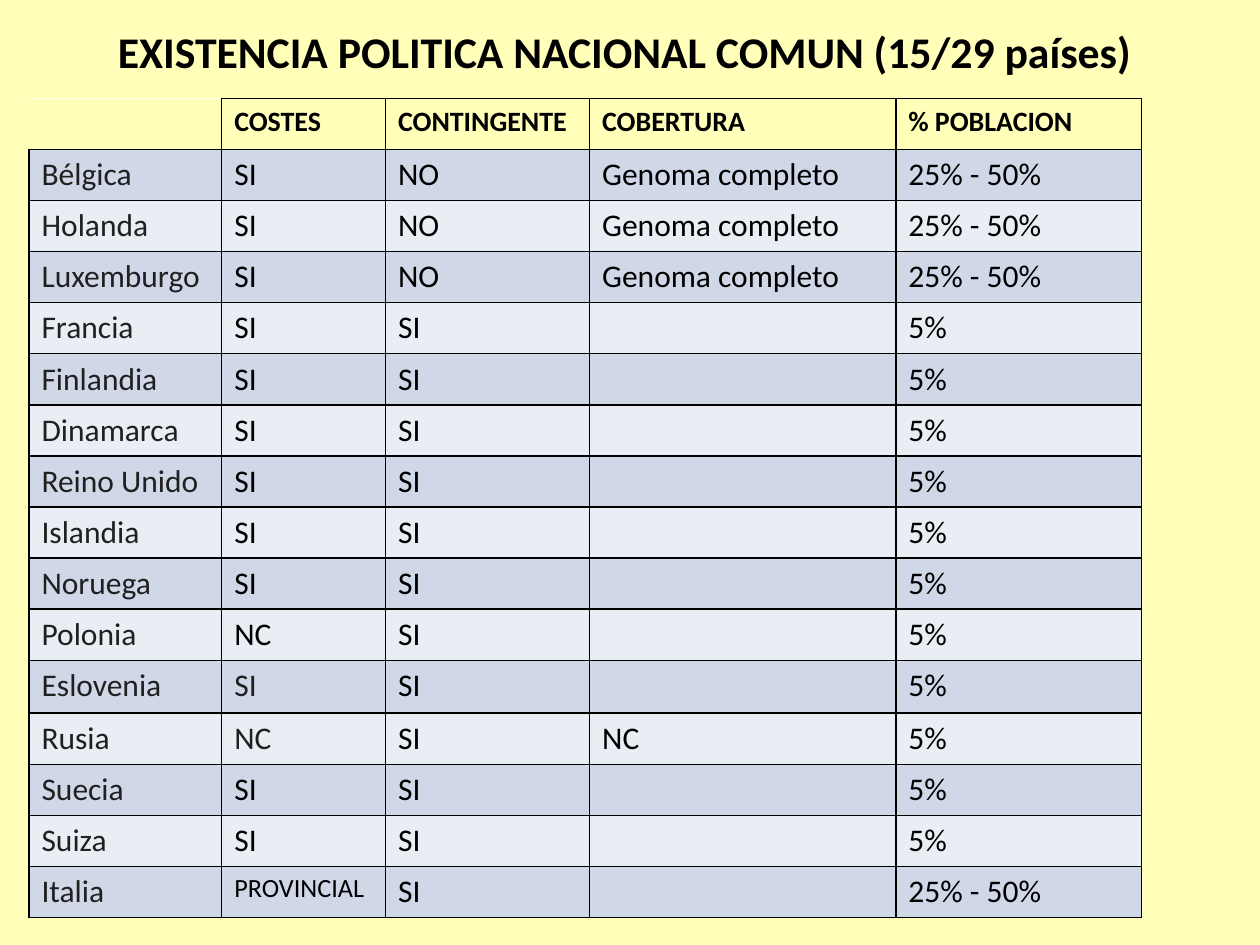
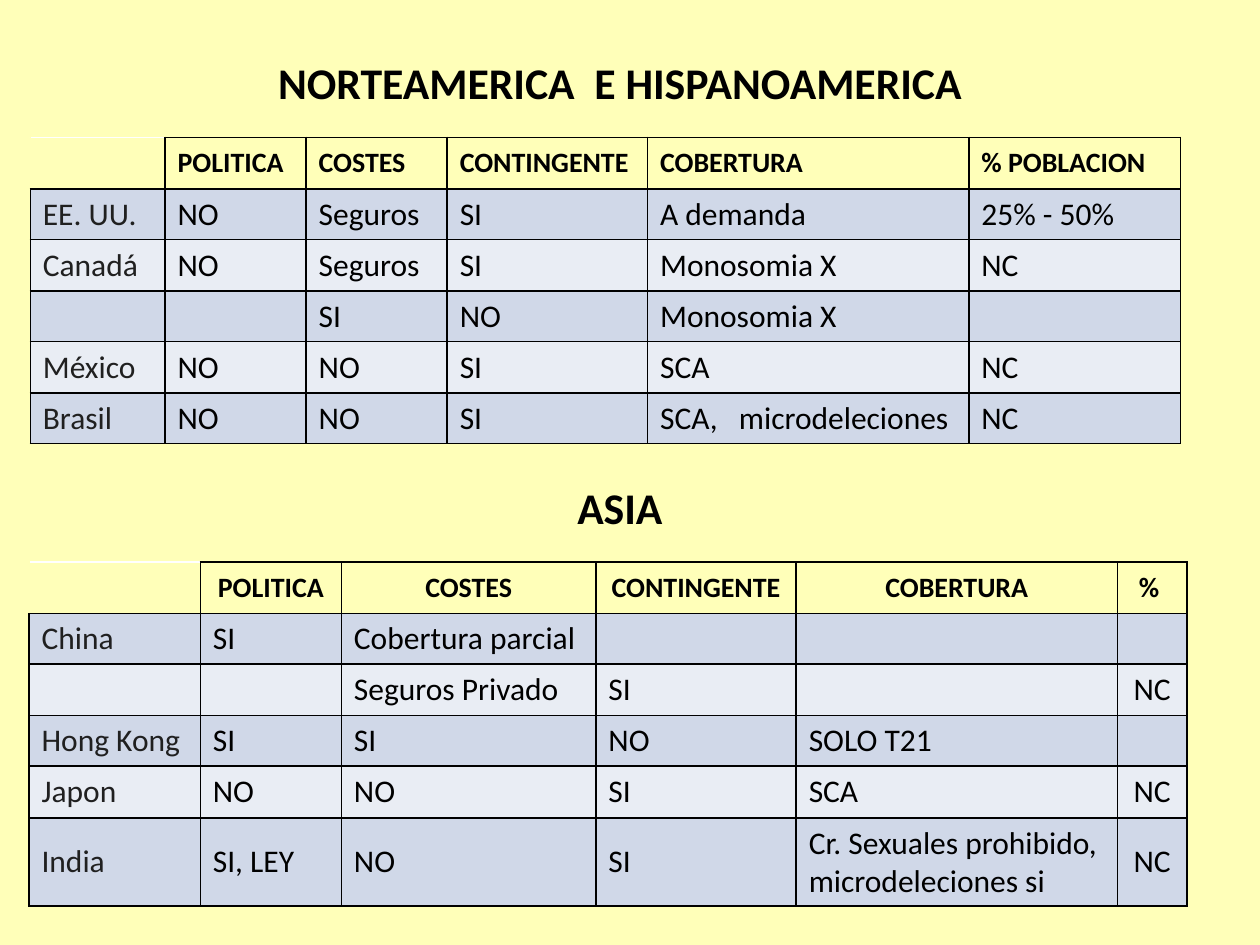
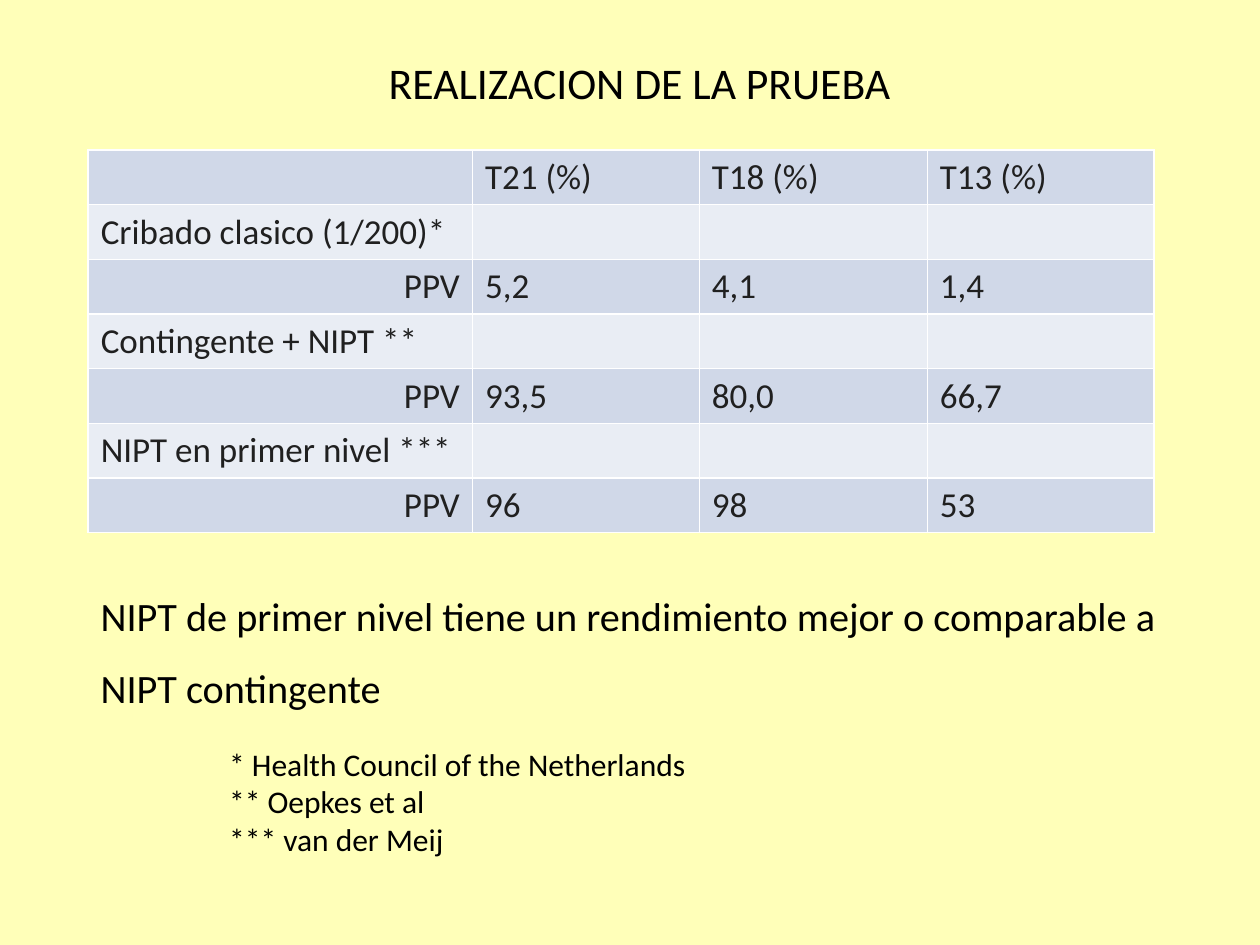
from pptx import Presentation
from pptx.dml.color import RGBColor
from pptx.enum.text import MSO_ANCHOR, MSO_AUTO_SIZE, PP_ALIGN
from pptx.oxml import parse_xml
from pptx.oxml.ns import nsdecls
from pptx.util import Inches, Pt

FONT = "Calibri"
BLACK = "000000"
CHARCOAL = "202020"
WHITE = "FFFFFF"
BACKGROUND = "FFFFB9"
BANDS = ("D0D8E8", "E9EDF4")


def color(hex_code):
    return RGBColor.from_string(hex_code)


class Deck:
    """Holds the shared style and the slide being filled."""

    def __init__(self):
        self.presentation = Presentation()
        self.presentation.slide_width = Inches(10)
        self.presentation.slide_height = Inches(7.5)
        self.slide = None

    def new_slide(self):
        self.slide = self.presentation.slides.add_slide(self.presentation.slide_layouts[6])
        fill = self.slide.background.fill
        fill.solid()
        fill.fore_color.rgb = color(BACKGROUND)

    def format_runs(self, paragraph, size, bold=False, ink=BLACK):
        for run in paragraph.runs:
            run.font.name = FONT
            run.font.size = Pt(size)
            run.font.bold = bold
            run.font.color.rgb = color(ink)

    def text(self, left, top, width, height, text, size, bold=False,
             align=PP_ALIGN.LEFT, line_spacing=1.0):
        box = self.slide.shapes.add_textbox(
            Inches(left), Inches(top), Inches(width), Inches(height))
        frame = box.text_frame
        frame.word_wrap = True
        frame.auto_size = MSO_AUTO_SIZE.SHAPE_TO_FIT_TEXT
        frame.text = text
        for paragraph in frame.paragraphs:
            paragraph.alignment = align
            paragraph.line_spacing = line_spacing
            self.format_runs(paragraph, size, bold)

    def title(self, left, top, width, text, bold=True):
        self.text(left, top, width, 0.52, text, 25, bold, PP_ALIGN.CENTER)

    def borders(self, cell, left, right, top, bottom):
        properties = cell._tc.get_or_add_tcPr()
        for side, line in zip("LRTB", (left, right, top, bottom)):
            properties.append(parse_xml(
                f'<a:ln{side} {nsdecls("a")} w="12700"><a:solidFill>'
                f'<a:srgbClr val="{line}"/></a:solidFill></a:ln{side}>'))

    def table(self, left, top, widths, heights, rows, size=18, line=BLACK, ink=BLACK,
              open_header=True, anchor=MSO_ANCHOR.TOP):
        """Draw a banded table; an open header is bold, unfilled and has a blank corner."""
        table = self.slide.shapes.add_table(
            len(rows), len(widths), Inches(left), Inches(top),
            Inches(sum(widths)), Inches(sum(heights))).table
        table.first_row = table.horz_banding = False
        for column, width in zip(table.columns, widths):
            column.width = Inches(width)
        for row, height in zip(table.rows, heights):
            row.height = Inches(height)
        for row_index, values in enumerate(rows):
            is_header = open_header and row_index == 0
            band = BANDS[(row_index - open_header) % 2]
            for column_index, value in enumerate(values):
                cell = table.cell(row_index, column_index)
                cell.text = value
                cell.vertical_anchor = anchor
                self.format_runs(cell.text_frame.paragraphs[0],
                                 16 if is_header else size, is_header,
                                 CHARCOAL if column_index == 0 else ink)
                is_corner = is_header and column_index == 0
                self.borders(cell, BACKGROUND if is_corner else line, line,
                             WHITE if is_corner else line, line)
                if is_header:
                    cell.fill.background()
                else:
                    cell.fill.solid()
                    cell.fill.fore_color.rgb = color(band)
        return table

    def align_cells(self, cells, align):
        for cell in cells:
            cell.text_frame.paragraphs[0].alignment = align


def europe_slide(deck):
    deck.new_slide()
    full_coverage = ["SI", "NO", "Genoma completo", "25% - 50%"]
    contingent = ["SI", "SI", "", "5%"]
    rows = [["", "COSTES", "CONTINGENTE", "COBERTURA", "% POBLACION"]]
    rows += [[country] + full_coverage for country in ("Bélgica", "Holanda", "Luxemburgo")]
    rows += [[country] + contingent for country in (
        "Francia", "Finlandia", "Dinamarca", "Reino Unido", "Islandia", "Noruega")]
    rows += [
        ["Polonia", "NC", "SI", "", "5%"],
        ["Eslovenia"] + contingent,
        ["Rusia", "NC", "SI", "NC", "5%"],
        ["Suecia"] + contingent,
        ["Suiza"] + contingent,
        ["Italia", "PROVINCIAL", "SI", "", "25% - 50%"],
    ]
    heights = [0.42 if row[0] == "Eslovenia" else 0.4 for row in rows]
    table = deck.table(0.23, 0.78, [1.53, 1.3, 1.62, 2.43, 1.95], heights, rows)
    for row, values in zip(table.rows, rows):
        cost = row.cells[1].text_frame.paragraphs[0]
        if values[0] in ("Eslovenia", "Rusia"):
            deck.format_runs(cost, 18, ink=CHARCOAL)
        elif values[0] == "Italia":
            deck.format_runs(cost, 15)
    deck.title(0.23, 0.15, 9.45, "EXISTENCIA POLITICA NACIONAL COMUN (15/29 países)")


def america_asia_slide(deck):
    deck.new_slide()
    header = ["", "POLITICA", "COSTES", "CONTINGENTE", "COBERTURA"]
    america = [
        header + ["% POBLACION"],
        ["EE. UU.", "NO", "Seguros", "SI", "A demanda", "25% - 50%"],
        ["Canadá", "NO", "Seguros", "SI", "Monosomia X", "NC"],
        ["", "", "SI", "NO", "Monosomia X", ""],
        ["México", "NO", "NO", "SI", "SCA", "NC"],
        ["Brasil", "NO", "NO", "SI", "SCA,   microdeleciones", "NC"],
    ]
    deck.table(0.24, 1.09, [1.07, 1.12, 1.12, 1.59, 2.55, 1.68],
               [0.41, 0.4] * 3, america, anchor=MSO_ANCHOR.MIDDLE)
    deck.title(0.39, 0.39, 9.06, "NORTEAMERICA  E HISPANOAMERICA")

    asia = [
        header + ["% "],
        ["China", "SI", "Cobertura parcial", "", "", ""],
        ["", "", "Seguros Privado", "SI", "", "NC"],
        ["Hong Kong", "SI", "SI", "NO", "SOLO T21", ""],
        ["Japon", "NO", "NO", "SI", "SCA", "NC"],
        ["India", "SI, LEY", "NO", "SI",
         "Cr. Sexuales prohibido, microdeleciones si", "NC"],
    ]
    table = deck.table(0.23, 4.46, [1.36, 1.12, 2.02, 1.59, 2.55, 0.55],
                       [0.41, 0.4, 0.41, 0.4, 0.41, 0.7], asia, anchor=MSO_ANCHOR.MIDDLE)
    deck.align_cells(table.rows[0].cells, PP_ALIGN.CENTER)
    deck.align_cells([row.cells[5] for row in table.rows], PP_ALIGN.CENTER)
    deck.title(0.39, 3.77, 9.06, "ASIA")


def test_results_slide(deck):
    deck.new_slide()
    deck.title(0.7, 0.39, 8.75, "REALIZACION DE LA PRUEBA", bold=False)
    predictive_values = {
        "Cribado clasico (1/200)*": ["5,2", "4,1", "1,4"],
        "Contingente + NIPT **": ["93,5", "80,0", "66,7"],
        "NIPT en primer nivel ***": ["96", "98", "53"],
    }
    rows = [["", "T21 (%)", "T18 (%)", "T13 (%)"]]
    for strategy, values in predictive_values.items():
        rows += [[strategy, "", "", ""], ["PPV"] + values]
    table = deck.table(0.7, 1.19, [3.05, 1.8, 1.81, 1.8], [0.43] * len(rows), rows,
                       size=20, line=WHITE, ink=CHARCOAL, open_header=False)
    deck.align_cells([table.cell(row, 0) for row in range(2, len(rows), 2)], PP_ALIGN.RIGHT)
    deck.text(1.72, 5.86, 6.25, 1.01,
              "* Health Council of the Netherlands\n** Oepkes et al\n*** van der Meij", 18)
    deck.text(0.7, 4.45, 8.59, 1.2,
              "NIPT de primer nivel tiene un rendimiento mejor o comparable a NIPT contingente",
              23, line_spacing=1.5)


def main():
    deck = Deck()
    europe_slide(deck)
    america_asia_slide(deck)
    test_results_slide(deck)
    deck.presentation.save("out.pptx")


if __name__ == "__main__":
    main()
